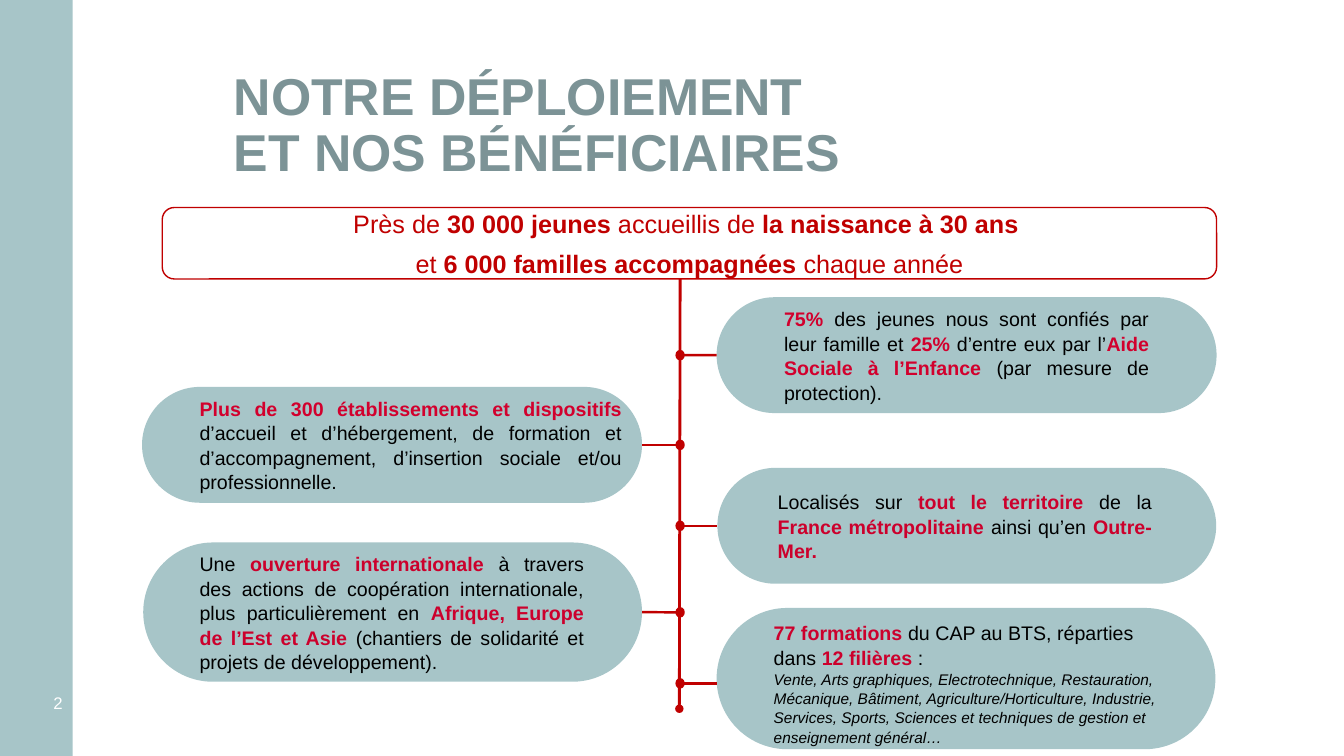
from pptx import Presentation
from pptx import util as u
from pptx.dml.color import RGBColor
from pptx.enum import shapes, text
from pptx.oxml import parse_xml
from pptx.oxml.ns import nsdecls

TEAL, RED, WHITE, BLACK = "A7C5C8", "C00000", "FFFFFF", "000000"
SPINE_X, DOT_W, DOT_H = 17.14, 0.2, 0.23
CENTER, JUSTIFY = text.PP_ALIGN.CENTER, text.PP_ALIGN.JUSTIFY
LEFT, RIGHT = text.PP_ALIGN.LEFT, text.PP_ALIGN.RIGHT

BRANCHES = [
    dict(pill=(18.06, 7.49, 12.6, 2.92), label=(19.51, 9.7), y=8.95, accent="D2002D",
         words="|75% |des jeunes nous sont confiés par leur famille et |25% |d’entre eux par "
               "l’|Aide Sociale à l’Enfance |(par mesure de protection)."),
    dict(pill=(3.58, 9.75, 12.6, 2.92), label=(4.78, 11.15), y=11.21, accent="D2002D",
         words="|Plus de 300 établissements et dispositifs |d’accueil et d’hébergement, de "
               "formation et d’accompagnement, d’insertion sociale et/ou professionnelle."),
    dict(pill=(18.08, 11.79, 12.57, 2.92), label=(19.35, 9.93), y=13.25, accent="CC002C",
         words="Localisés sur |tout le territoire |de la |France métropolitaine |ainsi qu’en "
               "|Outre-Mer."),
    dict(pill=(3.61, 13.67, 12.57, 3.51), label=(4.78, 10.19), y=15.43, accent="CC002C",
         words="Une |ouverture internationale |à travers des actions de coopération "
               "internationale, plus particulièrement en |Afrique, Europe de l’Est et Asie "
               "|(chantiers de solidarité et projets de développement)."),
    dict(pill=(18.06, 15.32, 12.57, 3.56), label=(19.25, 10.19), y=17.22, accent="CC002C",
         words="|77 formations |du CAP au BTS, réparties dans |12 filières |: ", align=LEFT,
         note="Vente, Arts graphiques, Electrotechnique, Restauration, Mécanique, Bâtiment, "
              "Agriculture/Horticulture, Industrie, Services, Sports, Sciences et techniques de "
              "gestion et enseignement général…"),
]


def color(value):
    """Turn a hex string into a colour."""
    return RGBColor.from_string(value)


def add_span(para, words, size, tint, bold=False, italic=False):
    """Add one formatted run to a paragraph."""
    span = para.add_run()
    span.text = words
    font = span.font
    font.name, font.size, font.bold, font.italic = "Arial", u.Pt(size), bold, italic
    font.color.rgb = color(tint)


def write(box, lines, size, tint, accent=None, bold=False, align=LEFT, spacing=1.04, after=0):
    """Fill a shape with paragraphs in which a bar switches bold accent on and off."""
    frame = box.text_frame
    frame.word_wrap = True
    frame.vertical_anchor = text.MSO_ANCHOR.MIDDLE
    for index, line in enumerate(lines):
        para = frame.add_paragraph() if index else frame.paragraphs[0]
        para.alignment, para.line_spacing, para.space_after = align, spacing, u.Pt(after)
        for position, words in enumerate(line.split("|")):
            if words:
                strong = position % 2 == 1
                add_span(para, words, size, accent if strong else tint, bold or strong)
    return para


def add_box(page, left, top, width, height):
    """Add an empty text box."""
    return page.shapes.add_textbox(u.Cm(left), u.Cm(top), u.Cm(width), u.Cm(height))


def add_shape(page, kind, area, fill, line=None, radius=None):
    """Add a flat preset shape, with an outline if a line colour is given."""
    shape = page.shapes.add_shape(kind, *(u.Cm(length) for length in area))
    shape.shadow.inherit = False
    shape.fill.solid()
    shape.fill.fore_color.rgb = color(fill)
    if line:
        shape.line.color.rgb = color(line)
        shape.line.width = u.Pt(1)
    else:
        shape.line.fill.background()
    if radius is not None:
        shape.adjustments[0] = radius
    return shape


def add_line(page, x1, y1, x2, y2, width):
    """Add a red straight connector."""
    line = page.shapes.add_connector(shapes.MSO_CONNECTOR.STRAIGHT,
                                     u.Cm(x1), u.Cm(y1), u.Cm(x2), u.Cm(y2))
    line.line.color.rgb = color(RED)
    line.line.width = u.Pt(width)
    line._element.spPr.append(parse_xml(f"<a:effectLst {nsdecls('a')}/>"))
    return line


def add_sidebar(page, left, top, width, height):
    """Draw the side band and its page number."""
    add_shape(page, shapes.MSO_SHAPE.RECTANGLE, (left, top, width, height), TEAL)
    number = add_box(page, left, top + 17.25, width, 0.91)
    write(number, ["2"], 12, WHITE, align=RIGHT, spacing=1)


def add_title(page, left, top, width, height):
    """Write the two-line title."""
    para = write(add_box(page, left, top, width, height), ["NOTRE DÉPLOIEMENT "],
                 37, "7C9396", bold=True, spacing=0.9)
    para.add_line_break()
    add_span(para, "ET NOS BÉNÉFICIAIRES", 37, "7C9396", bold=True)


def add_banner(page, left, top, width, height):
    """Draw the outlined banner with the key figures."""
    banner = add_shape(page, shapes.MSO_SHAPE.ROUNDED_RECTANGLE, (left, top, width, height),
                       WHITE, RED)
    write(banner, ["Près de |30 000 jeunes |accueillis de| la naissance à 30 ans ",
                   "et |6 000 familles accompagnées |chaque année"],
          18, RED, accent=RED, align=CENTER, after=6)


def add_spine(page, top, bottom):
    """Draw the vertical line with its round end."""
    spine = add_line(page, SPINE_X, top, SPINE_X - 0.02, bottom, 2)
    spine.line._get_or_add_ln().append(parse_xml(f'<a:tailEnd {nsdecls("a")} type="oval"/>'))


def add_branch(page, pill, label, y, accent, words, align=JUSTIFY, note=None):
    """Draw a pill, its text, its dot on the spine and the line between them."""
    left, top, width, height = pill
    body = add_shape(page, shapes.MSO_SHAPE.ROUNDED_RECTANGLE, pill, TEAL, radius=0.5)
    on_right = left > SPINE_X
    start = SPINE_X + (DOT_W / 2 if on_right else -DOT_W / 2)
    line = add_line(page, start, y, left if on_right else left + width, y, 1.75)
    if abs(top + height / 2 - y) < 0.05:
        line.end_connect(body, 1 if on_right else 3)
    add_shape(page, shapes.MSO_SHAPE.OVAL,
              (SPINE_X - DOT_W / 2, y - DOT_H / 2, DOT_W, DOT_H), RED, RED)
    para = write(add_box(page, label[0], y - 0.69, label[1], 1.38), [words],
                 14, BLACK, accent=accent, align=align, after=6)
    if note:
        para.add_line_break()
        add_span(para, note, 11, BLACK, italic=True)


def main():
    """Build and save the slide."""
    deck = Presentation()
    deck.slide_width, deck.slide_height = u.Cm(33.87), u.Cm(19.05)
    page = deck.slides.add_slide(deck.slide_layouts[6])
    add_sidebar(page, -0.05, 0, 1.88, 19.1)
    add_title(page, 5.64, 1.35, 22.83, 3.68)
    add_spine(page, 7.01, 17.86)
    for branch in BRANCHES:
        add_branch(page, **branch)
    add_banner(page, 4.09, 5.23, 26.57, 1.8)
    deck.save("out.pptx")


if __name__ == "__main__":
    main()
